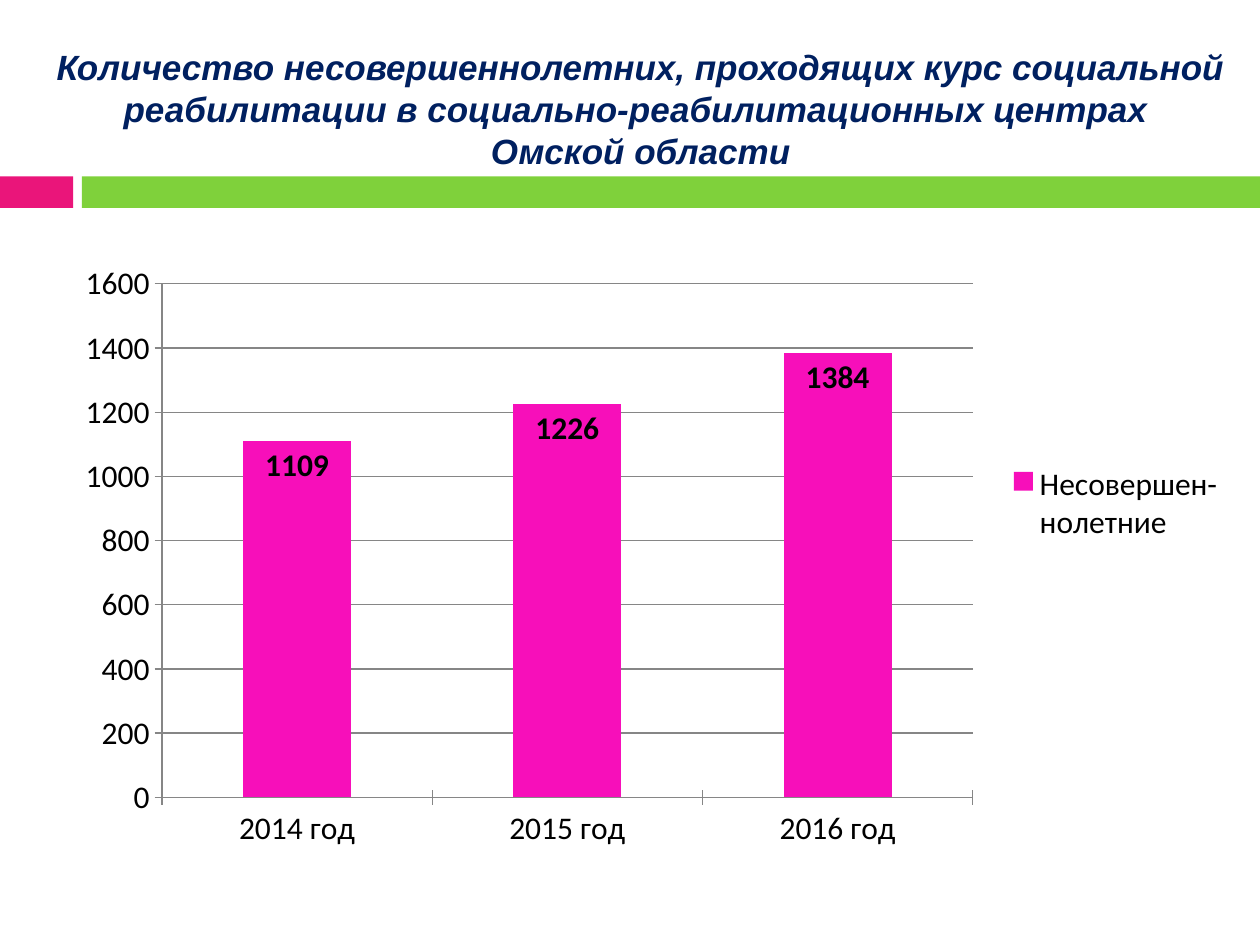
"""Build the slide on minors in rehabilitation centres of Omsk region."""
from dataclasses import dataclass

from lxml import etree
from pptx import Presentation
from pptx.chart.data import CategoryChartData
from pptx.dml.color import RGBColor
from pptx.enum.chart import XL_CHART_TYPE, XL_LABEL_POSITION, XL_LEGEND_POSITION, XL_TICK_MARK
from pptx.enum.shapes import MSO_SHAPE
from pptx.enum.text import MSO_ANCHOR, PP_ALIGN
from pptx.oxml.ns import qn
from pptx.util import Inches, Pt

RECT = MSO_SHAPE.RECTANGLE
COLUMNS = XL_CHART_TYPE.COLUMN_CLUSTERED
INSIDE_END = XL_LABEL_POSITION.INSIDE_END
RIGHT = XL_LEGEND_POSITION.RIGHT
CROSS = XL_TICK_MARK.CROSS
TOP = MSO_ANCHOR.TOP
CENTER = PP_ALIGN.CENTER

W, H = Inches(10), Inches(7.5)
COLORS = {"pink": "EA157A", "green": "7FD13B", "navy": "002060",
          "bar": "F70FBA", "text": "000000", "grid": "868686"}
TITLE = ("Количество несовершеннолетних, проходящих курс социальной "
         "реабилитации в социально-реабилитационных центрах ",
         "Омской области")
TITLE_FONT = {"name": "Arial", "size": Pt(20), "bold": True, "italic": True}
CHART_FONT = {"name": "Calibri", "size": Pt(18)}
LABEL_FONT = {**CHART_FONT, "bold": True}
COUNTS = {"2014 год": 1109, "2015 год": 1226, "2016 год": 1384}


@dataclass(frozen=True)
class Box:
    """Place on the slide, in inches."""
    x: float
    y: float
    w: float
    h: float

    def emu(self) -> tuple:
        return tuple(Inches(v) for v in (self.x, self.y, self.w, self.h))


@dataclass(frozen=True)
class Band:
    """Filled strip under the title."""
    box: Box
    color: str


BANDS = (Band(Box(0, 1.4, 0.58, 0.25), "pink"),
         Band(Box(0.65, 1.4, 9.35, 0.25), "green"))
TITLE_BOX = Box(0.28, -0.16, 9.61, 3.3)
CHART_BOX = Box(0.35, 2.02, 9.45, 5.07)
PLOT = Box(0.099, 0.046, 0.681, 0.804)
LEGEND = Box(0.8, 0.32, 0.2, 0.14)


def rgb(name: str) -> RGBColor:
    return RGBColor.from_string(COLORS[name])


def set_font(font, fmt: dict, color: str) -> None:
    for key, value in fmt.items():
        setattr(font, key, value)
    font.color.rgb = rgb(color)


def set_line(line) -> None:
    line.color.rgb = rgb("grid")
    line.width = Pt(0.75)


def add_band(slide, band: Band) -> None:
    sp = slide.shapes.add_shape(RECT, *band.box.emu())
    sp.shadow.inherit = False
    sp.fill.solid()
    sp.fill.fore_color.rgb = rgb(band.color)
    sp.line.fill.background()


def add_title(slide) -> None:
    tf = slide.shapes.add_textbox(*TITLE_BOX.emu()).text_frame
    for key, value in {"word_wrap": True, "vertical_anchor": TOP,
                       "margin_top": Inches(0.52)}.items():
        setattr(tf, key, value)
    for i, text in enumerate(TITLE):
        p = tf.add_paragraph() if i else tf.paragraphs[0]
        p.alignment = CENTER
        p.line_spacing = Pt(24)
        r = p.add_run()
        r.text = text
        set_font(r.font, TITLE_FONT, "navy")


def set_layout(parent, after: str, box: Box, inner: bool = False) -> None:
    for old in parent.findall(qn("c:layout")):
        parent.remove(old)
    layout = etree.Element(qn("c:layout"))
    manual = etree.SubElement(layout, qn("c:manualLayout"))
    values = {"layoutTarget": "inner"} if inner else {}
    values |= {"xMode": "edge", "yMode": "edge",
               "x": box.x, "y": box.y, "w": box.w, "h": box.h}
    for tag, value in values.items():
        etree.SubElement(manual, qn(f"c:{tag}")).set("val", str(value))
    prior = parent.find(qn(after)) if after else None
    parent.insert(0 if prior is None else parent.index(prior) + 1, layout)


def add_chart(slide) -> None:
    data = CategoryChartData()
    data.categories = list(COUNTS)
    data.add_series("Несовершен-нолетние", list(COUNTS.values()))
    chart = slide.shapes.add_chart(COLUMNS, *CHART_BOX.emu(), data).chart
    set_font(chart.font, CHART_FONT, "text")
    chart.has_title = False
    chart.has_legend = True
    chart.legend.position = RIGHT
    chart.legend.include_in_layout = False
    set_font(chart.legend.font, CHART_FONT, "text")

    plot = chart.plots[0]
    plot.gap_width = 150
    plot.vary_by_categories = False
    plot.has_data_labels = True
    labels = plot.data_labels
    labels.show_value = True
    labels.position = INSIDE_END
    set_font(labels.font, LABEL_FONT, "text")
    fill = plot.series[0].format.fill
    fill.solid()
    fill.fore_color.rgb = rgb("bar")

    for axis in (chart.category_axis, chart.value_axis):
        axis.major_tick_mark = CROSS
        set_line(axis.format.line)
        set_font(axis.tick_labels.font, CHART_FONT, "text")
    axis = chart.value_axis
    for key, value in {"minimum_scale": 0, "maximum_scale": 1600,
                       "major_unit": 200, "has_major_gridlines": True}.items():
        setattr(axis, key, value)
    set_line(axis.major_gridlines.format.line)
    area = chart.element.find(".//" + qn("c:plotArea"))
    set_layout(area, "", PLOT, inner=True)
    set_layout(area.getparent().find(qn("c:legend")), "c:legendPos", LEGEND)


def main() -> None:
    prs = Presentation()
    prs.slide_width, prs.slide_height = W, H
    slide = prs.slides.add_slide(prs.slide_layouts[6])
    for band in BANDS:
        add_band(slide, band)
    add_title(slide)
    add_chart(slide)
    prs.save("out.pptx")


if __name__ == "__main__":
    main()
